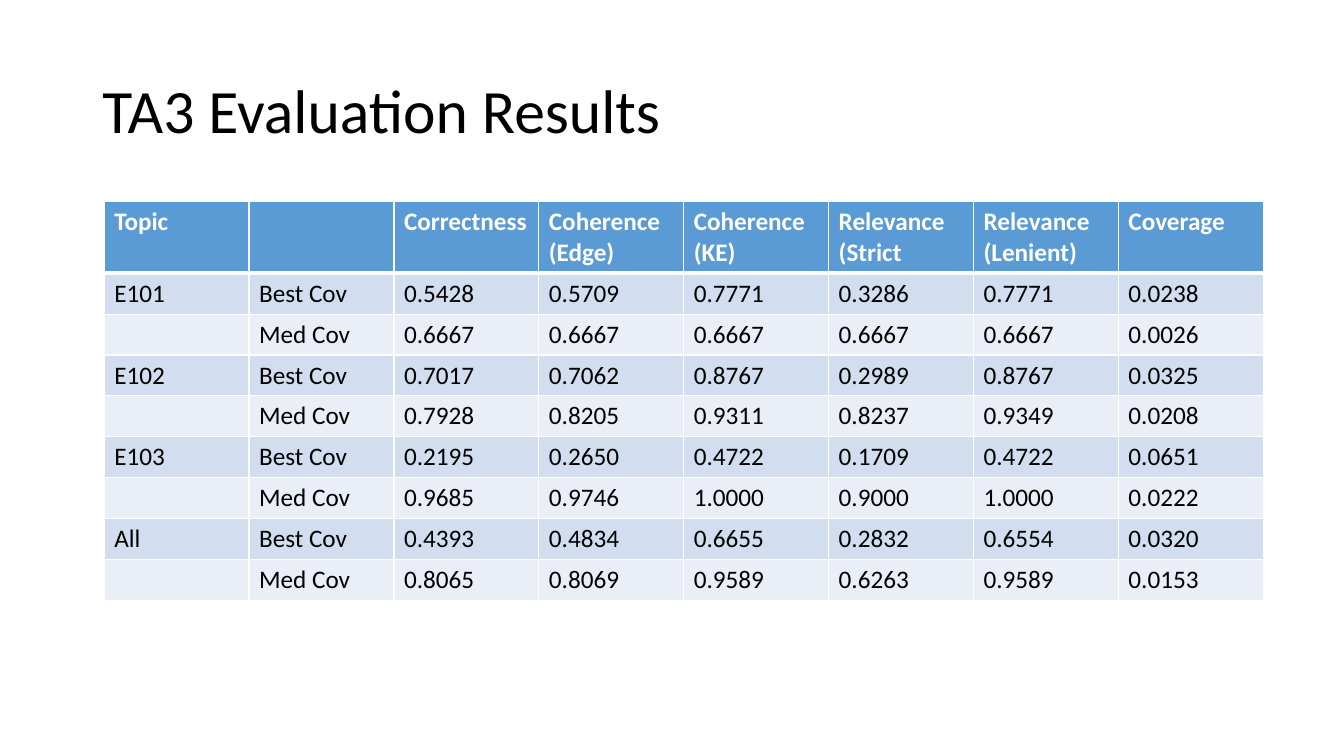
from lxml import etree
from pptx import Presentation
from pptx.dml.color import RGBColor
from pptx.enum import text
from pptx.oxml import ns
from pptx.util import Pt

TITLE = "TA3 Evaluation Results"
HEAD = ["Topic", "", "Correctness", "Coherence (Edge)", "Coherence (KE)",
        "Relevance (Strict", "Relevance (Lenient)", "Coverage"]
BEST, MED = "Best Cov", "Med Cov"
ROWS = [
    ["E101", BEST, "0.5428", "0.5709", "0.7771", "0.3286", "0.7771", "0.0238"],
    ["", MED, "0.6667", "0.6667", "0.6667", "0.6667", "0.6667", "0.0026"],
    ["E102", BEST, "0.7017", "0.7062", "0.8767", "0.2989", "0.8767", "0.0325"],
    ["", MED, "0.7928", "0.8205", "0.9311", "0.8237", "0.9349", "0.0208"],
    ["E103", BEST, "0.2195", "0.2650", "0.4722", "0.1709", "0.4722", "0.0651"],
    ["", MED, "0.9685", "0.9746", "1.0000", "0.9000", "1.0000", "0.0222"],
    ["All", BEST, "0.4393", "0.4834", "0.6655", "0.2832", "0.6554", "0.0320"],
    ["", MED, "0.8065", "0.8069", "0.9589", "0.6263", "0.9589", "0.0153"],
]
FONT, WHITE, BLACK = "Calibri", "FFFFFF", "000000"
BLUE, BANDS = "5B9BD5", ["D2DEEF", "EAEFF7"]
LEFT, TOP, WIDTH = 74.4, 144, 828
HEAD_H, ROW_H = 50, 29.2


def tint(code):
    return RGBColor.from_string(code)


def style(par, size, color, bold=False):
    for run in par.runs:
        run.font.name, run.font.size, run.font.bold = FONT, Pt(size), bold
        run.font.color.rgb = tint(color)


def edge(cell, side, width):
    """Draw a white border on one side (L, R, T or B) of a cell."""
    props = cell._tc.get_or_add_tcPr()
    line = etree.SubElement(props, ns.qn("a:ln" + side), w=str(Pt(width)))
    fill = etree.SubElement(line, ns.qn("a:solidFill"))
    etree.SubElement(fill, ns.qn("a:srgbClr"), val=WHITE)


def add_title(slide):
    title = slide.shapes.title
    title.left, title.top, title.width, title.height = map(Pt, (66, 28.8, 828, 104.4))
    frame = title.text_frame
    frame.text = TITLE
    frame.vertical_anchor = text.MSO_ANCHOR.MIDDLE
    par = frame.paragraphs[0]
    par.alignment, par.line_spacing = text.PP_ALIGN.LEFT, 0.9
    style(par, 44, BLACK)


def add_grid(slide):
    data = [HEAD] + ROWS
    high = HEAD_H + ROW_H * len(ROWS)
    grid = slide.shapes.add_table(len(data), len(HEAD), Pt(LEFT), Pt(TOP),
                                  Pt(WIDTH), Pt(high)).table
    for col in grid.columns:
        col.width = Pt(WIDTH / len(HEAD))
    for r, words in enumerate(data):
        top = r == 0
        grid.rows[r].height = Pt(HEAD_H if top else ROW_H)
        for c, word in enumerate(words):
            cell = grid.cell(r, c)
            for side in "LRTB":
                heavy = (r, side) in [(0, "B"), (1, "T")]
                edge(cell, side, 3 if heavy else 1)
            cell.fill.solid()
            cell.fill.fore_color.rgb = tint(BLUE if top else BANDS[(r - 1) % 2])
            if word:
                cell.text_frame.text = word
                style(cell.text_frame.paragraphs[0], 18, WHITE if top else BLACK, top)


def main():
    deck = Presentation()
    deck.slide_width, deck.slide_height = Pt(960), Pt(540)
    slide = deck.slides.add_slide(deck.slide_layouts[5])
    add_title(slide)
    add_grid(slide)
    deck.save("out.pptx")


if __name__ == "__main__":
    main()
